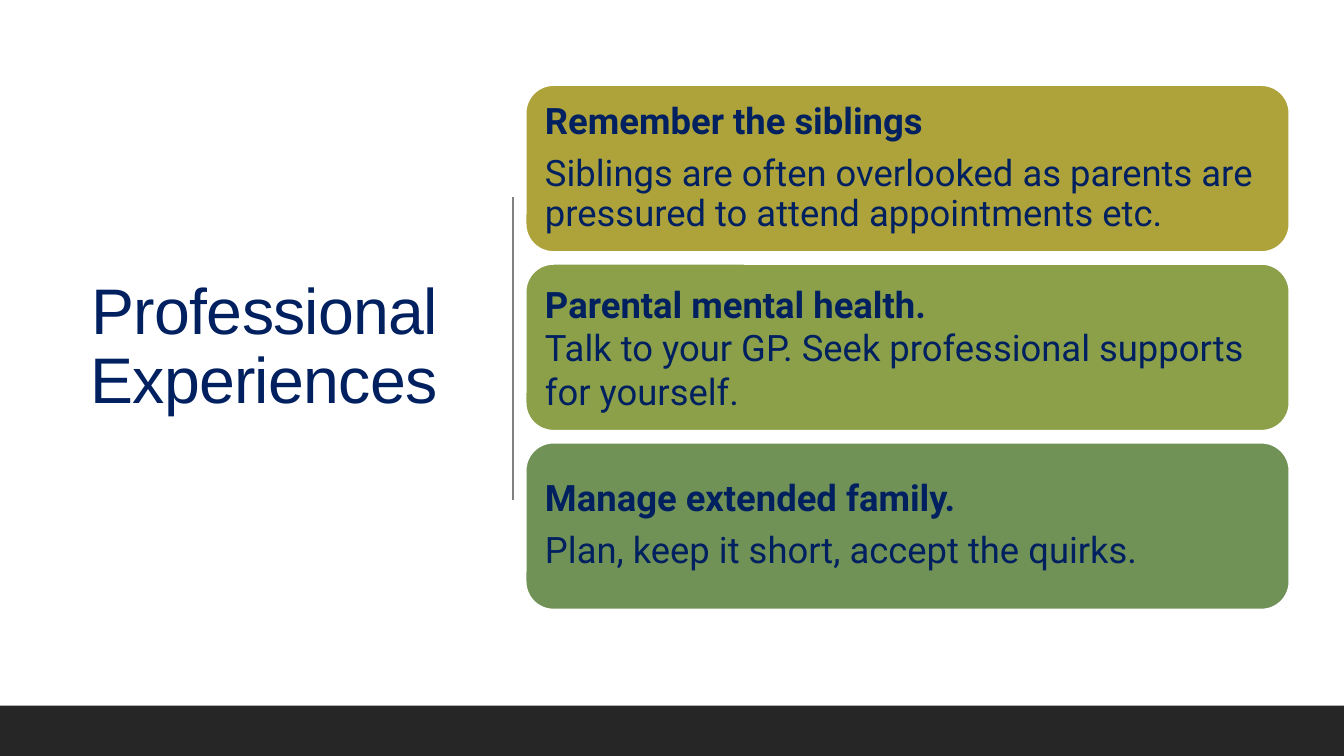
"""Build the Professional Experiences slide with its three advice cards."""
from dataclasses import dataclass

from lxml.etree import SubElement
from pptx import Presentation
from pptx.dml.color import RGBColor
from pptx.enum.shapes import MSO_CONNECTOR, MSO_SHAPE
from pptx.enum.text import MSO_ANCHOR, MSO_AUTO_SIZE, PP_ALIGN
from pptx.oxml.ns import qn
from pptx.util import Pt


@dataclass(frozen=True)
class Theme:
    paper: str = "FFFFFF"
    ink: str = "002060"
    rule: str = "808080"
    footer: str = "262626"
    cards: tuple = ("AEA33A", "8CA049", "719257")
    title_font: str = "Arial"
    body_font: str = "Roboto"
    title_size: float = 46
    body_size: float = 26


def assign(target, values):
    for name, value in values.items():
        setattr(target, name, value)


class SlideBuilder:
    def __init__(self, slide, theme):
        self.slide = slide
        self.theme = theme
        self.paint(slide.background.fill, theme.paper)

    def paint(self, fill, color):
        fill.solid()
        fill.fore_color.rgb = RGBColor.from_string(color)

    def add_text(self, paragraph, text, font, size, bold=False):
        run = paragraph.add_run()
        run.text = text
        assign(run.font, {"name": font, "size": Pt(size), "bold": bold})
        run.font.color.rgb = RGBColor.from_string(self.theme.ink)
        return run

    def title(self, text, left, top, width, height):
        title = self.slide.shapes.title
        assign(title, {"left": Pt(left), "top": Pt(top),
                       "width": Pt(width), "height": Pt(height)})
        assign(title.text_frame, {"vertical_anchor": MSO_ANCHOR.MIDDLE,
                                  "word_wrap": True,
                                  "auto_size": MSO_AUTO_SIZE.NONE})
        paragraph = title.text_frame.paragraphs[0]
        assign(paragraph, {"alignment": PP_ALIGN.RIGHT, "line_spacing": 0.9})
        run = self.add_text(paragraph, text, self.theme.title_font, self.theme.title_size)
        run.font._element.set("spc", "-50")

    def rule(self, x, top, bottom):
        rule = self.slide.shapes.add_connector(
            MSO_CONNECTOR.STRAIGHT, Pt(x), Pt(top), Pt(x), Pt(bottom))
        rule.line.width = Pt(1)
        rule.line.color.rgb = RGBColor.from_string(self.theme.rule)
        SubElement(rule._element.spPr, qn("a:effectLst"))

    def block(self, preset, color, left, top, width, height):
        block = self.slide.shapes.add_shape(
            preset, Pt(left), Pt(top), Pt(width), Pt(height))
        block.shadow.inherit = False
        self.paint(block.fill, color)
        block.line.fill.background()
        return block

    def card(self, heading, advice, color, spacing, left, top, width, height):
        card = self.block(MSO_SHAPE.ROUNDED_RECTANGLE, color, left, top, width, height)
        card.line.width = Pt(1.25)
        card.line.color.rgb = RGBColor.from_string(self.theme.paper)
        frame = card.text_frame
        assign(frame, {"word_wrap": True, "vertical_anchor": MSO_ANCHOR.MIDDLE,
                       "margin_left": Pt(8), "margin_right": Pt(8),
                       "margin_top": Pt(8), "margin_bottom": Pt(8)})
        for paragraph, text, bold in ((frame.paragraphs[0], heading, True),
                                      (frame.add_paragraph(), advice, False)):
            assign(paragraph, {"alignment": PP_ALIGN.LEFT, **spacing})
            self.add_text(paragraph, text, self.theme.body_font, self.theme.body_size, bold)


def main():
    deck = Presentation()
    assign(deck, {"slide_width": Pt(960), "slide_height": Pt(540)})
    theme = Theme()
    builder = SlideBuilder(deck.slides.add_slide(deck.slide_layouts[5]), theme)
    builder.title("Professional Experiences", 29.5, 49.7, 290, 398)
    builder.rule(366.5, 141, 357)
    builder.block(MSO_SHAPE.RECTANGLE, theme.footer, 0, 504, 960, 36)

    spaced = {"line_spacing": 0.9, "space_after": Pt(9.1)}
    plain = {"line_spacing": 1.0, "space_after": Pt(0)}
    experiences = (
        ("Remember the siblings",
         "Siblings are often overlooked as parents are pressured to attend appointments etc.",
         spaced),
        ("Parental mental health.",
         "Talk to your GP. Seek professional supports for yourself.", plain),
        ("Manage extended family.", "Plan, keep it short, accept the quirks.", spaced),
    )
    card_top, card_pitch = 60.8, 127.7
    for index, (heading, advice, spacing) in enumerate(experiences):
        builder.card(heading, advice, theme.cards[index], spacing,
                     375.5, card_top + index * card_pitch, 545.5, 119.2)
    deck.save("out.pptx")


if __name__ == "__main__":
    main()
